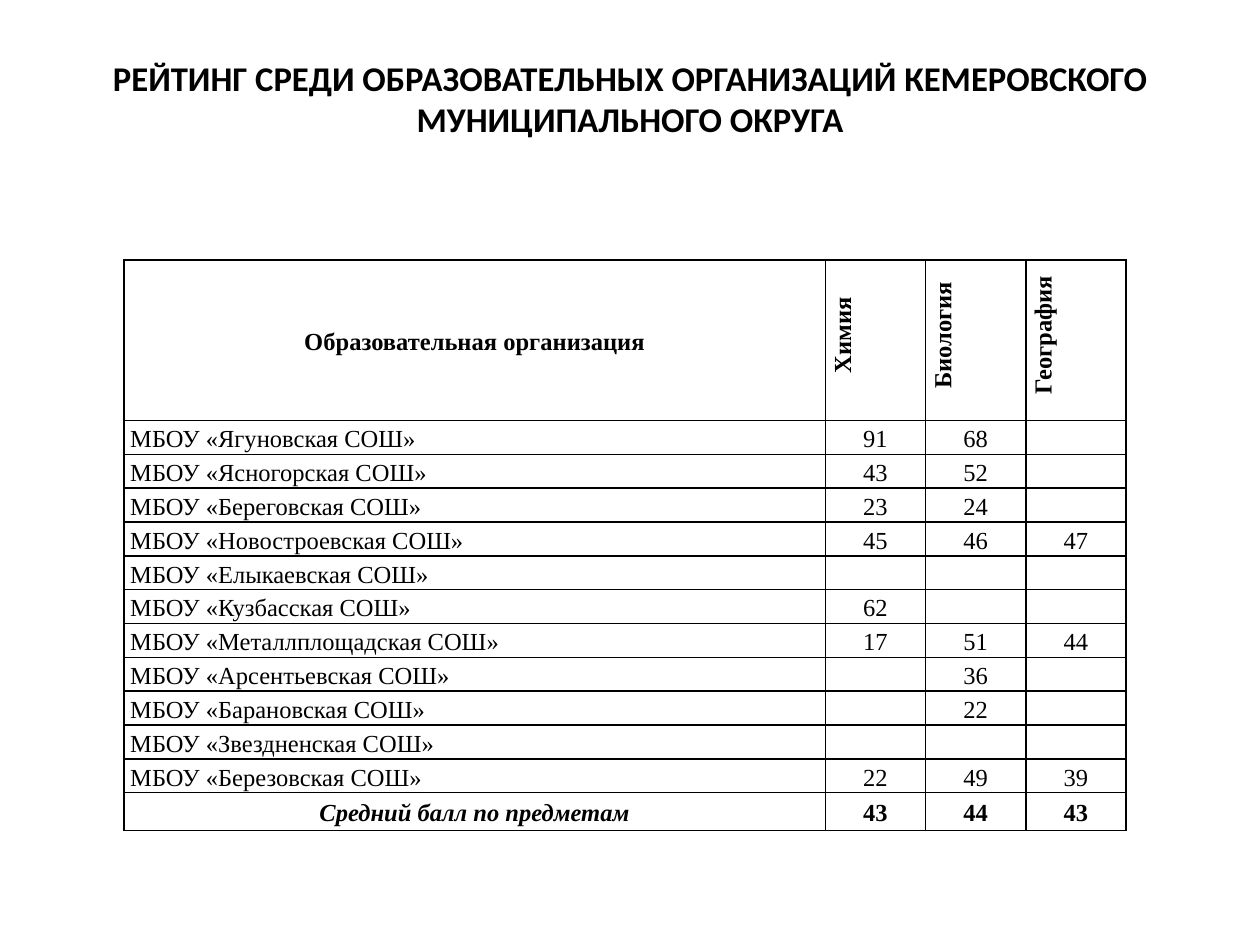
from dataclasses import dataclass

from lxml import etree
from pptx import Presentation
from pptx.dml.color import RGBColor
from pptx.enum.text import MSO_ANCHOR, PP_ALIGN
from pptx.oxml.ns import qn
from pptx.util import Pt

LEFT, CENTER = PP_ALIGN.LEFT, PP_ALIGN.CENTER
MIDDLE = MSO_ANCHOR.MIDDLE


@dataclass(frozen=True)
class Theme:
    ink: str = "000000"
    title_font: str = "Calibri"
    table_font: str = "Times New Roman"
    title_size: float = 19.8
    table_size: float = 14
    border: float = 1


THEME = Theme()

TITLE = "РЕЙТИНГ СРЕДИ ОБРАЗОВАТЕЛЬНЫХ ОРГАНИЗАЦИЙ КЕМЕРОВСКОГО МУНИЦИПАЛЬНОГО ОКРУГА"
HEADER = ("Образовательная организация", "Химия", "Биология", "География")
SCHOOLS = (
    ("Ягуновская", 91, 68, ""),
    ("Ясногорская", 43, 52, ""),
    ("Береговская", 23, 24, ""),
    ("Новостроевская", 45, 46, 47),
    ("Елыкаевская", "", "", ""),
    ("Кузбасская", 62, "", ""),
    ("Металлплощадская", 17, 51, 44),
    ("Арсентьевская", "", 36, ""),
    ("Барановская", "", 22, ""),
    ("Звездненская", "", "", ""),
    ("Березовская", 22, 49, 39),
)
AVERAGE = ("Средний балл по предметам", 43, 44, 43)

HEADER_H, SCHOOL_H, AVERAGE_H = 91.7, 17.8, 21.6
SUBJECT_W = 57.3


def write(tf, text, font=THEME.table_font, size=THEME.table_size, bold=False,
          italic=False, align=CENTER, spacing=None):
    """Fill the first paragraph; an empty one still keeps its type size."""
    p = tf.paragraphs[0]
    p.alignment = align
    p.line_spacing = spacing
    if text == "":
        etree.SubElement(p._p, qn("a:endParaRPr"), sz=str(int(size * 100)))
        return
    r = p.add_run()
    r.text = str(text)
    r.font.name, r.font.size = font, Pt(size)
    r.font.bold, r.font.italic = bold, italic
    r.font.color.rgb = RGBColor.from_string(THEME.ink)


def add_borders(cell):
    tc_pr = cell._tc.get_or_add_tcPr()
    for i, side in enumerate(("a:lnL", "a:lnR", "a:lnT", "a:lnB")):
        ln = etree.Element(qn(side), w=str(Pt(THEME.border)))
        fill = etree.SubElement(ln, qn("a:solidFill"))
        etree.SubElement(fill, qn("a:srgbClr"), val=THEME.ink)
        tc_pr.insert(i, ln)


def turn_upward(cell):
    cell._tc.get_or_add_tcPr().set("vert", "vert270")
    cell.text_frame.paragraphs[0]._p.get_or_add_pPr().set("marL", str(Pt(5.7)))


def add_title(slide, x, y, w, h):
    tf = slide.shapes.add_textbox(Pt(x), Pt(y), Pt(w), Pt(h)).text_frame
    tf.word_wrap = True
    tf.vertical_anchor = MIDDLE
    tf.margin_top, tf.margin_bottom = Pt(0), Pt(21)
    write(tf, TITLE, font=THEME.title_font, size=THEME.title_size, bold=True)


def add_rating(slide, x, y, w):
    schools = [(f"МБОУ «{name} СОШ»", *scores) for name, *scores in SCHOOLS]
    rows = [HEADER, *schools, AVERAGE]
    heights = [HEADER_H, *[SCHOOL_H] * len(schools), AVERAGE_H]
    subjects = len(HEADER) - 1
    widths = [w - subjects * SUBJECT_W, *[SUBJECT_W] * subjects]

    table = slide.shapes.add_table(len(rows), len(widths), Pt(x), Pt(y),
                                   Pt(w), Pt(sum(heights))).table
    table.first_row = table.horz_banding = False
    for column, width in zip(table.columns, widths):
        column.width = Pt(width)
    for row, height, values in zip(table.rows, heights, rows):
        row.height = Pt(height)
        for i, (cell, value) in enumerate(zip(row.cells, values)):
            is_school = values in schools
            cell.fill.background()
            cell.vertical_anchor = MIDDLE
            cell.margin_left = cell.margin_right = Pt(3.6)
            cell.margin_top = cell.margin_bottom = Pt(0)
            write(cell.text_frame, value, bold=not is_school,
                  italic=values is AVERAGE and i == 0,
                  align=LEFT if is_school and i == 0 else CENTER,
                  spacing=1.15)
            add_borders(cell)
            if values is HEADER and i > 0:
                turn_upward(cell)


def main():
    prs = Presentation()
    prs.slide_width, prs.slide_height = Pt(720), Pt(540)
    slide = prs.slides.add_slide(prs.slide_layouts[6])
    add_title(slide, 36, 21.6, 648, 90)
    add_rating(slide, 70.8, 148.6, 572.7)
    prs.save("out.pptx")


if __name__ == "__main__":
    main()
